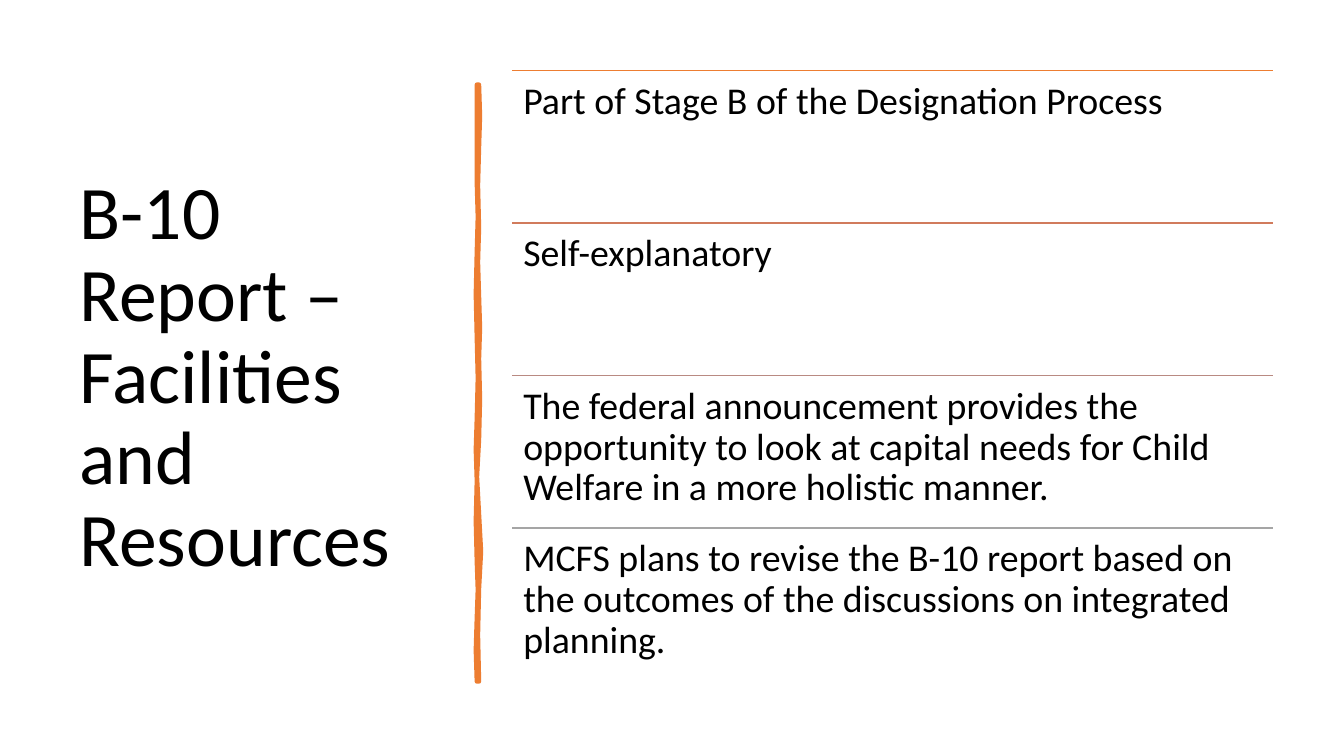
from lxml.etree import SubElement
from pptx import Presentation
from pptx.dml.color import RGBColor
from pptx.enum.shapes import MSO_CONNECTOR
from pptx.enum.text import MSO_ANCHOR, MSO_AUTO_SIZE, PP_ALIGN
from pptx.oxml.ns import qn
from pptx.util import Pt

EMU_PER_PX = 9144  # 100 px to the inch
SLIDE_WIDTH, SLIDE_HEIGHT = 1333, 750

BLACK = RGBColor(0x00, 0x00, 0x00)
ORANGE = RGBColor(0xED, 0x7D, 0x31)
RUST = RGBColor(0xD1, 0x7B, 0x5C)
ROSE = RGBColor(0xB9, 0x8A, 0x82)
GREY = RGBColor(0xA5, 0xA5, 0xA5)

HEADING = "B-10 Report – Facilities and Resources"
POINTS = [
    (ORANGE, "Part of Stage B of the Designation Process"),
    (RUST, "Self-explanatory"),
    (ROSE, "The federal announcement provides the opportunity to look at capital "
           "needs for Child Welfare in a more holistic manner."),
    (GREY, "MCFS plans to revise the B-10 report based on the outcomes of the "
           "discussions on integrated planning."),
]

# Hand-drawn divider: outline points relative to its top left corner
RIGHT_EDGE = [(2, 0), (3, 31), (2, 62), (1, 100), (2, 142), (1, 176), (2, 210),
              (3, 241), (2, 272), (3, 312), (2, 352), (0, 389), (2, 426),
              (4, 463), (2, 500), (1, 546), (2, 592)]
LEFT_EDGE = [(0, 592), (-1, 561), (0, 529), (1, 501), (0, 473), (-1, 433),
             (0, 393), (-1, 362), (0, 331), (1, 291), (0, 251), (-1, 208),
             (0, 166), (1, 131), (0, 97), (0, 0)]


def px(length):
    return round(length * EMU_PER_PX)


def apply_format(target, values):
    for attribute, value in values.items():
        setattr(target, attribute, value)


def write_text(frame, text, size, anchor, inset):
    frame.text = text
    apply_format(frame, {
        "word_wrap": True, "auto_size": MSO_AUTO_SIZE.NONE, "vertical_anchor": anchor,
        "margin_left": px(inset), "margin_right": px(inset),
        "margin_top": px(inset), "margin_bottom": px(inset),
    })
    paragraph = frame.paragraphs[0]
    apply_format(paragraph, {"alignment": PP_ALIGN.LEFT, "line_spacing": 0.9})
    apply_format(paragraph.runs[0].font, {"name": "Calibri", "size": Pt(size)})
    paragraph.runs[0].font.color.rgb = BLACK


def add_heading(slide, left, top, width, height):
    heading = slide.shapes.title
    apply_format(heading, {"left": px(left), "top": px(top),
                           "width": px(width), "height": px(height)})
    write_text(heading.text_frame, HEADING, 54, MSO_ANCHOR.MIDDLE, 10)


def add_divider(slide, left, top):
    outline = [(left + x, top + y) for x, y in RIGHT_EDGE + LEFT_EDGE]
    builder = slide.shapes.build_freeform(*outline[0], scale=EMU_PER_PX)
    builder.add_line_segments(outline[1:], close=True)
    divider = builder.convert_to_shape()
    divider.shadow.inherit = False
    divider.fill.solid()
    divider.fill.fore_color.rgb = ORANGE
    divider.line.color.rgb = ORANGE
    divider.line.width = Pt(3.25)


def add_points(slide, left, top, width, height):
    row_height = height / len(POINTS)
    for index, (rule_color, text) in enumerate(POINTS):
        row_top = top + index * row_height
        # Rule above the point
        rule = slide.shapes.add_connector(
            MSO_CONNECTOR.STRAIGHT, px(left), px(row_top), px(left + width), px(row_top))
        rule.line.color.rgb = rule_color
        rule.line.width = Pt(1)
        SubElement(rule._element.spPr, qn("a:effectLst"))
        # Wording of the point
        point = slide.shapes.add_textbox(px(left), px(row_top), px(width), px(row_height))
        write_text(point.text_frame, text, 27, MSO_ANCHOR.TOP, 11)


def main():
    deck = Presentation()
    apply_format(deck, {"slide_width": px(SLIDE_WIDTH), "slide_height": px(SLIDE_HEIGHT)})
    slide = deck.slides.add_slide(deck.slide_layouts[5])
    add_heading(slide, 69, 70, 374, 611)
    add_divider(slide, 473, 84)
    add_points(slide, 508, 70, 755, 605)
    deck.save("out.pptx")


if __name__ == "__main__":
    main()
